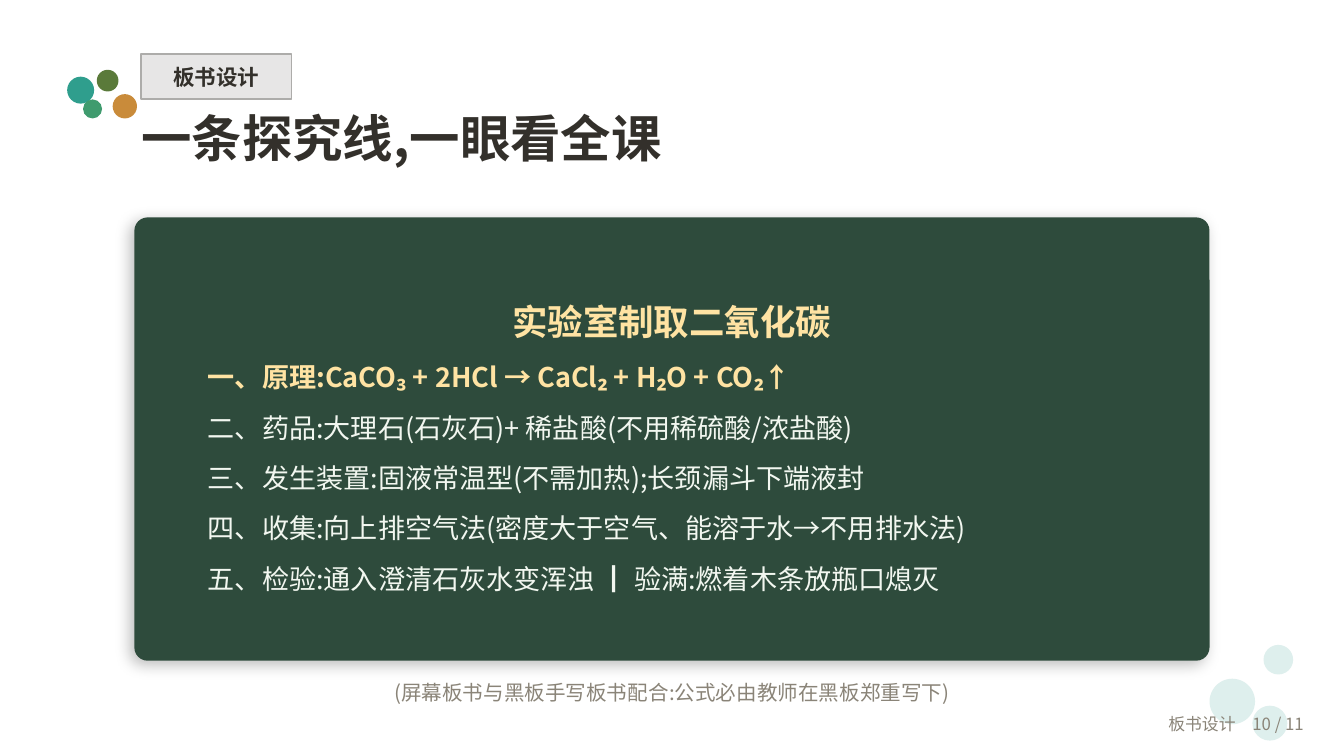
from lxml import etree
from pptx import Presentation
from pptx.dml.color import RGBColor
from pptx.enum import shapes, text
from pptx.oxml.ns import qn
from pptx.util import Cm, Pt

FONT = "Noto Sans CJK SC"
INK, GREY, GOLD, CHALK = "33302B", "8A8478", "FFE3A3", "F2F7F0"
LEFT, CENTER, RIGHT = text.PP_ALIGN.LEFT, text.PP_ALIGN.CENTER, text.PP_ALIGN.RIGHT
MIDDLE, TOP = text.MSO_ANCHOR.MIDDLE, text.MSO_ANCHOR.TOP

# left, top, diameter in cm, colour
BUBBLES = [
    (22.86, 12.83, 0.86, "DEEFED"),
    (23.88, 12.19, 0.56, "DEEFED"),
    (23.67, 13.34, 0.66, "DEEFED"),
    (1.27, 1.45, 0.51, "2F9E8D"),
    (1.83, 1.32, 0.41, "5A7A3A"),
    (1.57, 1.88, 0.36, "3F9B6E"),
    (2.13, 1.78, 0.46, "C98B3A"),
]

BOARD_POINTS = [
    "二、药品:大理石(石灰石)+ 稀盐酸(不用稀硫酸/浓盐酸)",
    "三、发生装置:固液常温型(不需加热);长颈漏斗下端液封",
    "四、收集:向上排空气法(密度大于空气、能溶于水→不用排水法)",
    "五、检验:通入澄清石灰水变浑浊 ┃ 验满:燃着木条放瓶口熄灭",
]


def color(value):
    return RGBColor.from_string(value)


def add_shape(page, kind, left, top, width, height, fill, line=None):
    shape = page.shapes.add_shape(kind, Cm(left), Cm(top), Cm(width), Cm(height))
    shape.shadow.inherit = False
    shape.fill.solid()
    shape.fill.fore_color.rgb = color(fill)
    if line:
        shape.line.color.rgb = color(line)
        shape.line.width = Pt(1)
    else:
        shape.line.fill.background()
    return shape


def add_shadow(shape):
    """Give the shape a soft shadow towards the lower left."""
    effects = shape._element.spPr.find(qn("a:effectLst"))
    shadow = etree.SubElement(
        effects, qn("a:outerShdw"), blurRad=str(Pt(8)), dist=str(Pt(3)),
        dir=str(135 * 60000), algn="ctr", rotWithShape="0")
    tint = etree.SubElement(shadow, qn("a:srgbClr"), val="000000")
    etree.SubElement(tint, qn("a:alpha"), val="25000")


def add_box(page, left, top, width, height):
    return page.shapes.add_textbox(Cm(left), Cm(top), Cm(width), Cm(height))


def set_frame(box, anchor=MIDDLE, inset=True):
    frame = box.text_frame
    frame.word_wrap = True
    frame.vertical_anchor = anchor
    if not inset:
        frame.margin_left = frame.margin_right = 0
        frame.margin_top = frame.margin_bottom = 0


def write(box, words, size, ink, bold=False, align=LEFT, spacing=None):
    """Add one paragraph, using the empty first one if it is still free."""
    frame = box.text_frame
    para = frame.paragraphs[0] if not frame.text else frame.add_paragraph()
    para.alignment = align
    if spacing:
        para.line_spacing = Pt(spacing)
    span = para.add_run()
    span.text = words
    span.font.size = Pt(size)
    span.font.bold = bold
    span.font.color.rgb = color(ink)
    span.font.name = FONT
    etree.SubElement(span.font._element, qn("a:ea"), typeface=FONT)


def add_heading(page):
    tag = add_shape(page, shapes.MSO_SHAPE.RECTANGLE, 2.67, 1.02, 2.84, 0.86,
                    "E7E6E6", line="ADACAA")
    set_frame(tag, inset=False)
    write(tag, "板书设计", 11.5, INK, bold=True, align=CENTER)
    title = add_box(page, 2.67, 2.03, 21.34, 1.4)
    set_frame(title, anchor=TOP, inset=False)
    write(title, "一条探究线,一眼看全课", 27, INK, bold=True)


def add_blackboard(page):
    board = add_shape(page, shapes.MSO_SHAPE.ROUNDED_RECTANGLE,
                      2.54, 4.11, 20.32, 8.38, "2E4B3C")
    board.adjustments[0] = 0.03
    add_shadow(board)
    notes = add_box(page, 3.68, 4.7, 18.03, 7.37)
    set_frame(notes)
    write(notes, "实验室制取二氧化碳", 19, GOLD, bold=True, align=CENTER, spacing=27)
    write(notes, "一、原理:CaCO₃ + 2HCl → CaCl₂ + H₂O + CO₂↑", 14.5, GOLD,
          bold=True, spacing=27)
    for point in BOARD_POINTS:
        write(notes, point, 14.5, CHALK, spacing=27)


def add_footer(page):
    caption = add_box(page, 2.54, 12.7, 20.32, 0.76)
    set_frame(caption)
    write(caption, "(屏幕板书与黑板手写板书配合:公式必由教师在黑板郑重写下)", 11, GREY,
          align=CENTER)
    number = add_box(page, 20.32, 13.31, 4.57, 0.76)
    set_frame(number)
    write(number, "板书设计　10 / 11", 9, GREY, align=RIGHT)


def main():
    deck = Presentation()
    deck.slide_width, deck.slide_height = Cm(25.4), Cm(14.29)
    page = deck.slides.add_slide(deck.slide_layouts[6])
    for left, top, size, fill in BUBBLES:
        add_shape(page, shapes.MSO_SHAPE.OVAL, left, top, size, size, fill)
    add_heading(page)
    add_blackboard(page)
    add_footer(page)
    deck.save("out.pptx")


if __name__ == "__main__":
    main()
